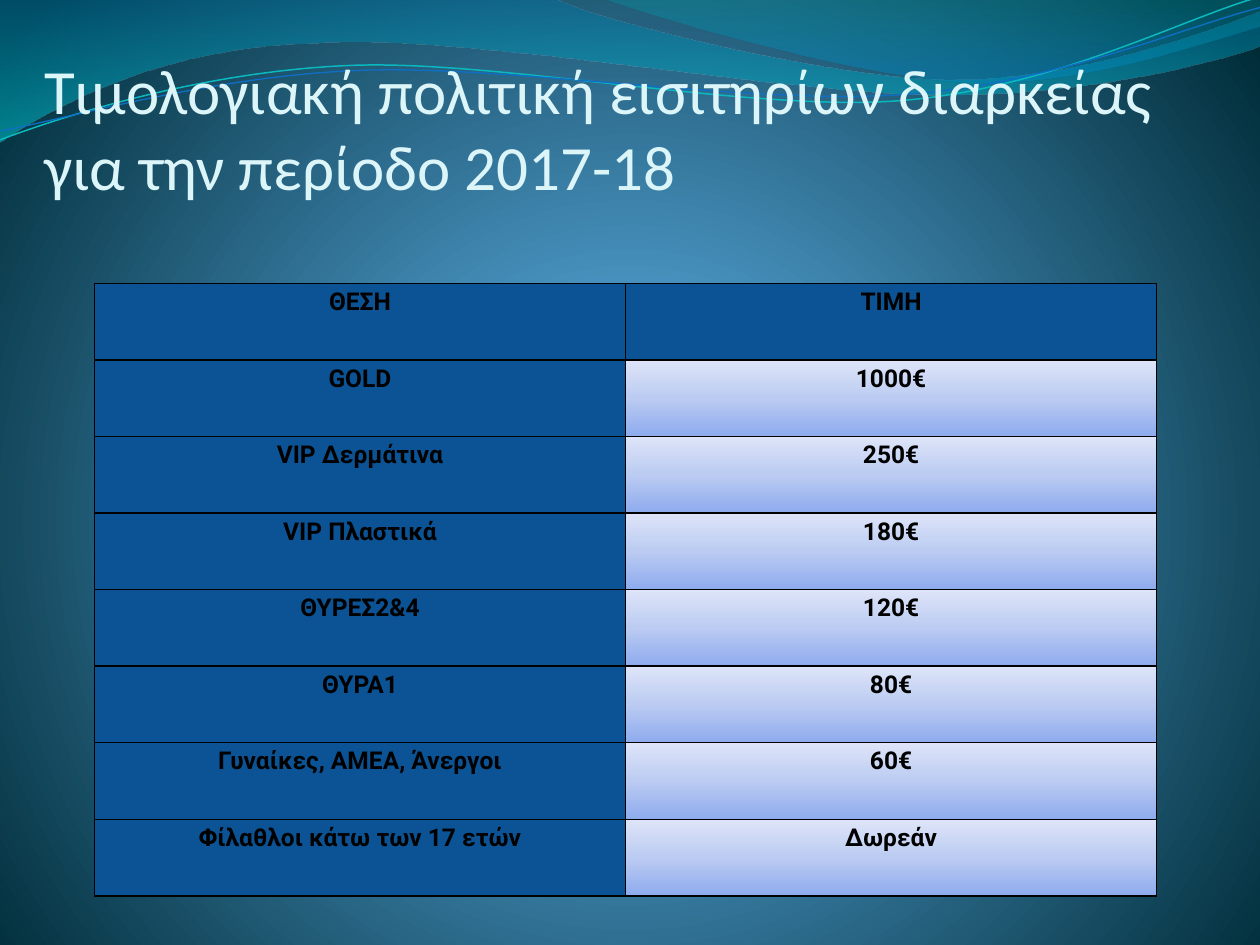
from math import cos, radians, sin

from lxml.etree import SubElement
from pptx import Presentation
from pptx.dml.color import RGBColor
from pptx.enum.text import MSO_ANCHOR, PP_ALIGN
from pptx.oxml import parse_xml
from pptx.oxml.ns import nsdecls, qn
from pptx.util import Inches, Pt


def color(code):
    return RGBColor.from_string(code)


def grad(root, stops, shade):
    """Replace the first empty fill under root by a gradient."""
    marks = ""
    for pos, code, *alpha in stops:
        clear = f'<a:alpha val="{alpha[0] * 1000}"/>' if alpha else ""
        marks += (f'<a:gs pos="{pos * 1000}"><a:srgbClr val="{code}">'
                  f'{clear}</a:srgbClr></a:gs>')
    fill = parse_xml(f'<a:gradFill {nsdecls("a")} rotWithShape="1">'
                     f'<a:gsLst>{marks}</a:gsLst>{shade}</a:gradFill>')
    old = root.find(".//" + qn("a:noFill"))
    old.getparent().replace(old, fill)


def linear(angle):
    return f'<a:lin ang="{angle * 60000}" scaled="0"/>'


def pairs(step):
    return list(zip(step[::2], step[1::2]))


def spin(step, mid, angle):
    """Turn the x, y pairs of a step about a point."""
    c, s = cos(radians(angle)), sin(radians(angle))
    mx, my = mid
    flat = []
    for x, y in pairs(step):
        flat += [mx + (x - mx) * c - (y - my) * s,
                 my + (x - mx) * s + (y - my) * c]
    return flat


def write(frame, text, font="Calibri", size=18, ink="000000", bold=False,
          align=PP_ALIGN.LEFT, space=1.0, after=0, hang=0):
    para = frame.paragraphs[0]
    para.alignment = align
    para.line_spacing = space
    para.space_after = Pt(after)
    if hang:
        props = para._p.get_or_add_pPr()
        props.set("marL", str(Inches(hang)))
        props.set("indent", str(-Inches(hang)))
    run = para.add_run()
    run.text = text
    run.font.name, run.font.size, run.font.bold = font, Pt(size), bold
    run.font.color.rgb = color(ink)


class Deck:
    font = "Roboto"
    head = "Calibri"
    pale = "DBF5F9"
    blue = "0B5394"
    sheen = [(0, "8EABEE"), (50, "BBCBF2"), (100, "DEE5F8")]

    def __init__(self):
        self.file = Presentation()
        self.file.slide_width, self.file.slide_height = Inches(10), Inches(7.5)
        self.slide = self.file.slides.add_slide(self.file.slide_layouts[6])

    def back(self, stops):
        self.slide.background.fill.background()
        grad(self.slide._element, stops,
             '<a:path path="circle"><a:fillToRect l="10000" t="110000" '
             'r="10000" b="100000"/></a:path>')

    def free(self, steps, close):
        """Outline of lines (x, y) and Bezier curves (three x, y pairs)."""
        ends = [(Inches(x), Inches(y)) for *_, x, y in steps]
        pen = self.slide.shapes.build_freeform(*ends[0])
        pen.add_line_segments(ends[1:], close=close)
        shape = pen.convert_to_shape()
        lines = list(shape._element.spPr.iter(qn("a:lnTo")))
        for line, step in zip(lines, steps[1:]):
            if len(step) == 2:
                continue
            bend = parse_xml(f'<a:cubicBezTo {nsdecls("a")}/>')
            for x, y in pairs(step):
                SubElement(bend, qn("a:pt"), x=str(Inches(x) - shape.left),
                           y=str(Inches(y) - shape.top))
            line.getparent().replace(line, bend)
        shape.shadow.inherit = False
        shape.fill.background()
        return shape

    def wave(self, steps, stops):
        shape = self.free(steps, True)
        grad(shape._element.spPr, stops, linear(90))
        shape.line.fill.background()

    def curve(self, steps, mid, ink, width, turn=-2.7):
        shape = self.free([spin(step, mid, -turn) for step in steps], False)
        shape.rotation = turn
        shape.line.color.rgb = color(ink)
        shape.line.width = Pt(width)

    def title(self, text, box):
        frame = self.slide.shapes.add_textbox(*map(Inches, box)).text_frame
        frame.word_wrap = True
        frame.vertical_anchor = MSO_ANCHOR.BOTTOM
        frame.margin_left = frame.margin_right = frame.margin_bottom = 0
        frame.margin_top = Inches(0.05)
        write(frame, text, font=self.head, size=36, ink=self.pale)

    def edge(self, cell):
        props = cell._tc.get_or_add_tcPr()
        for i, side in enumerate(("lnL", "lnR", "lnT", "lnB")):
            line = parse_xml(
                f'<a:{side} {nsdecls("a")} w="{Pt(1)}"><a:solidFill/></a:{side}>')
            SubElement(line[0], qn("a:srgbClr"), val="000000")
            props.insert(i, line)

    def table(self, rows, left, top, width, height):
        grid = self.slide.shapes.add_table(
            len(rows), len(rows[0]), Inches(left), Inches(top),
            Inches(width), Inches(height)).table
        grid.first_row = grid.horz_banding = False
        for r, row in enumerate(rows):
            for c, text in enumerate(row):
                cell = grid.cell(r, c)
                cell.margin_left = cell.margin_right = Inches(0.07)
                cell.margin_top = cell.margin_bottom = 0
                if r and c:
                    cell.fill.background()
                    grad(cell._tc, self.sheen, linear(270))
                else:
                    cell.fill.solid()
                    cell.fill.fore_color.rgb = color(self.blue)
                self.edge(cell)
                write(cell.text_frame, text, font=self.font, size=14,
                      bold=True, align=PP_ALIGN.CENTER, space=1.15,
                      after=10 if r > 1 else 0, hang=0.5)


def main():
    deck = Deck()

    # Background and waves
    deck.back([(0, "4AA0D6"), (25, "4C98C7"), (100, "002C38")])
    deck.wave([
        (0, 0), (4.4, -0.01), (4.76, 0.17, 6.64, 0.63, 7.58, 0.63),
        (8.53, 0.63, 9.58, 0.26, 10, 0.09), (10.01, 0.36),
        (9.83, 0.44, 8.7, 0.76, 7.46, 0.75),
        (6.22, 0.75, 3.82, 0.28, 2.57, 0.34),
        (1.29, 0.36, 0.46, 0.83, -0.01, 1.13), (0, 0),
    ], [(0, "0074A1", 45), (100, "00C6CF", 55)])
    deck.wave([
        (4.79, -0.01), (5.09, 0.11, 6.82, 0.62, 7.69, 0.65),
        (8.56, 0.69, 9.61, 0.32, 10, 0.21), (10, 0), (4.79, -0.01),
    ], [(0, "00A1A9", 30), (80, "008BBF", 45)])

    # Thin curves
    deck.curve([
        (0, 1.11), (0.48, 0.93, 1.58, 0.57, 2.77, 0.52),
        (3.95, 0.47, 5.93, 0.89, 7.13, 0.8),
        (8.33, 0.71, 9.38, 0.15, 9.98, -0.02),
    ], (4.99, 0.58), "0AB8BF", 0.85)
    deck.curve([
        (0, 1.04), (0.47, 0.96, 1.64, 0.61, 2.83, 0.56),
        (4.03, 0.51, 5.97, 0.84, 7.17, 0.75),
        (8.36, 0.67, 9.41, 0.21, 10, 0.06),
    ], (5, 0.59), "0F6FC6", 0.75)

    # Title
    deck.title("Τιμολογιακή πολιτική εισιτηρίων διαρκείας "
               "για την περίοδο 2017-18", (0.35, 0.36, 9, 1.25))

    # Price table
    deck.table([
        ("ΘΕΣΗ", "ΤΙΜΗ"),
        ("GOLD", "1000€"),
        ("VIP Δερμάτινα", "250€"),
        ("VIP Πλαστικά", "180€"),
        ("ΘΥΡΕΣ2&4", "120€"),
        ("ΘΥΡΑ1", "80€"),
        ("Γυναίκες, ΑΜΕΑ, Άνεργοι", "60€"),
        ("Φίλαθλοι κάτω των 17 ετών", "Δωρεάν"),
    ], 0.75, 2.25, 8.43, 4.86)

    deck.file.save("out.pptx")


if __name__ == "__main__":
    main()
